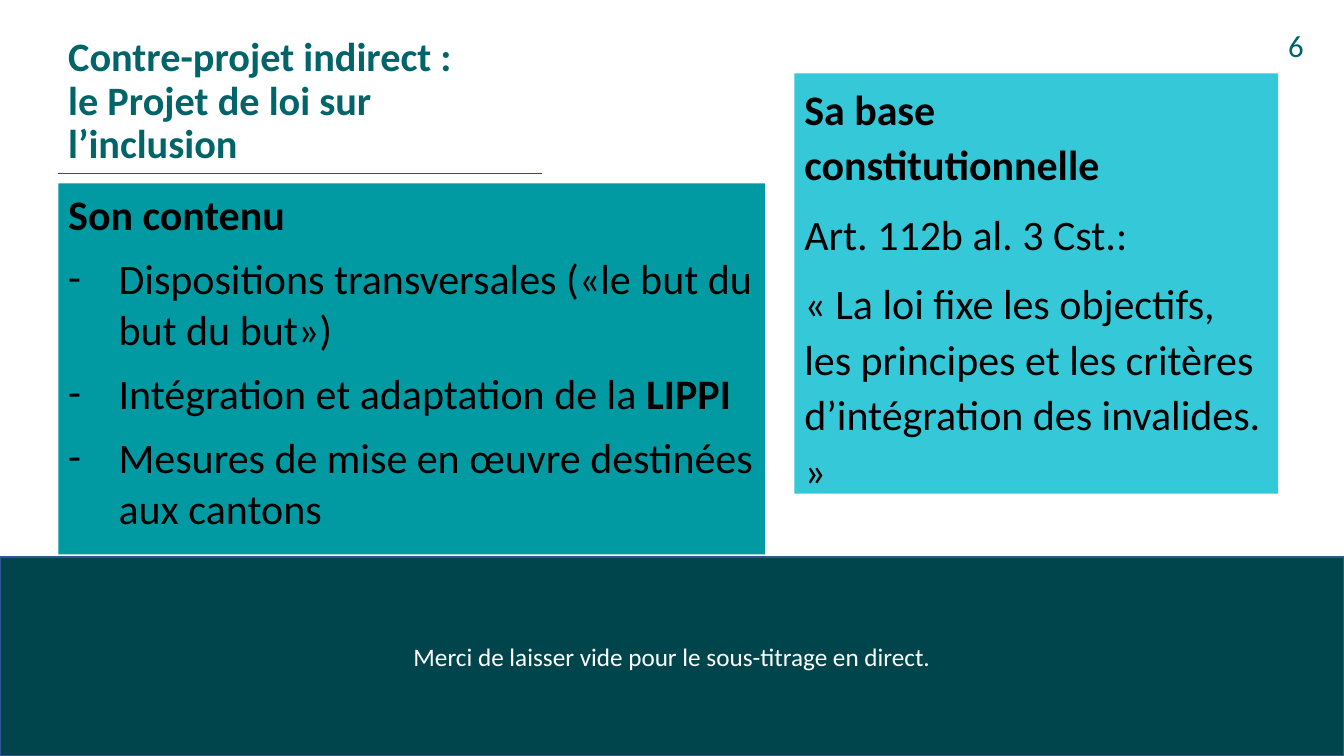
"""Build the slide on the indirect counter-proposal and its constitutional basis."""
from lxml.etree import SubElement
from pptx import Presentation
from pptx.dml.color import RGBColor
from pptx.enum.shapes import MSO_CONNECTOR, MSO_SHAPE
from pptx.enum.text import MSO_ANCHOR, PP_ALIGN
from pptx.oxml.ns import qn
from pptx.util import Cm, Pt


def color(hex_value):
    """Turn a hex string into a colour."""
    return RGBColor.from_string(hex_value)


def add_text(tf, runs, first=False, size=30, ink="000000", align=PP_ALIGN.LEFT,
             spacing=1.0, before=0, bullet=None):
    """Add one paragraph made of (text, bold) runs."""
    p = tf.paragraphs[0] if first else tf.add_paragraph()
    p.alignment, p.line_spacing, p.space_before = align, spacing, Pt(before)
    if bullet:
        pPr = p._p.get_or_add_pPr()
        pPr.set("marL", str(Cm(1.27)))
        pPr.set("indent", str(-Cm(1.27)))
        SubElement(pPr, qn("a:buFont"), typeface="Calibri")
        SubElement(pPr, qn("a:buChar"), char=bullet)
    for i, line in enumerate(runs):
        text, bold = line
        for j, part in enumerate(text.split("\n")):
            if j:
                p.add_line_break()
            r = p.add_run()
            r.text = part
            r.font.name, r.font.size, r.font.bold = "Calibri", Pt(size), bold
            r.font.color.rgb = color(ink)


prs = Presentation()
prs.slide_width, prs.slide_height = Cm(33.87), Cm(19.05)
s = prs.slides.add_slide(prs.slide_layouts[6])

panels = [
    (0, 14.04, 33.87, 5.01, "00444C"),
    (1.47, 4.62, 17.81, 9.35, "029AA2"),
    (20.02, 1.85, 12.19, 10.59, "34C8D8"),
]
frames = []
for x, y, w, h, fill in panels:
    sp = s.shapes.add_shape(MSO_SHAPE.RECTANGLE, Cm(x), Cm(y), Cm(w), Cm(h))
    sp.shadow.inherit = False
    sp.fill.solid()
    sp.fill.fore_color.rgb = color(fill)
    sp.line.fill.background()
    sp.text_frame.word_wrap = True
    sp.text_frame.vertical_anchor = MSO_ANCHOR.TOP
    frames.append(sp.text_frame)

footer, content, basis = frames
band = s.shapes[0]
band.line.color.rgb = color("325491")
band.line.width = Pt(1)
footer.vertical_anchor = MSO_ANCHOR.MIDDLE
add_text(footer, [("Merci de laisser vide pour le sous-titrage en direct.", False)],
         first=True, size=18, ink="FFFFFF", align=PP_ALIGN.CENTER)

add_text(content, [("Son contenu", True)], first=True, before=10)
measures = [
    [("Dispositions transversales («le but du but du but»)", False)],
    [("Intégration et adaptation de la ", False), ("LIPPI", True)],
    [("Mesures de mise en œuvre destinées aux cantons", False)],
]
for runs in measures:
    add_text(content, runs, before=10, bullet="-")

article = [
    ("Sa base\nconstitutionnelle", True),
    ("Art. 112b al. 3 Cst.:", False),
    ("« La loi fixe les objectifs, les principes et les critères d’intégration des invalides. »", False),
]
for i, run in enumerate(article):
    add_text(basis, [run], first=i == 0, spacing=1.1, before=10)

rule = s.shapes.add_connector(MSO_CONNECTOR.STRAIGHT, Cm(1.47), Cm(4.37), Cm(13.67), Cm(4.37))
rule.line.color.rgb = color("016469")
rule.line.width = Pt(1.2)
SubElement(rule._element.spPr, qn("a:effectLst"))

labels = [
    (1.47, 0.53, 12.19, 3.81, "Contre-projet indirect :\nle Projet de loi sur l’inclusion",
     True, 28.8, 0.9, MSO_ANCHOR.BOTTOM),
    (32.21, 0.56, 1.37, 2.62, "6", False, 22, 1.0, MSO_ANCHOR.TOP),
]
for x, y, w, h, text, bold, size, spacing, anchor in labels:
    tf = s.shapes.add_textbox(Cm(x), Cm(y), Cm(w), Cm(h)).text_frame
    tf.word_wrap = True
    tf.vertical_anchor = anchor
    add_text(tf, [(text, bold)], first=True, size=size, ink="016469", spacing=spacing)

prs.save("out.pptx")
